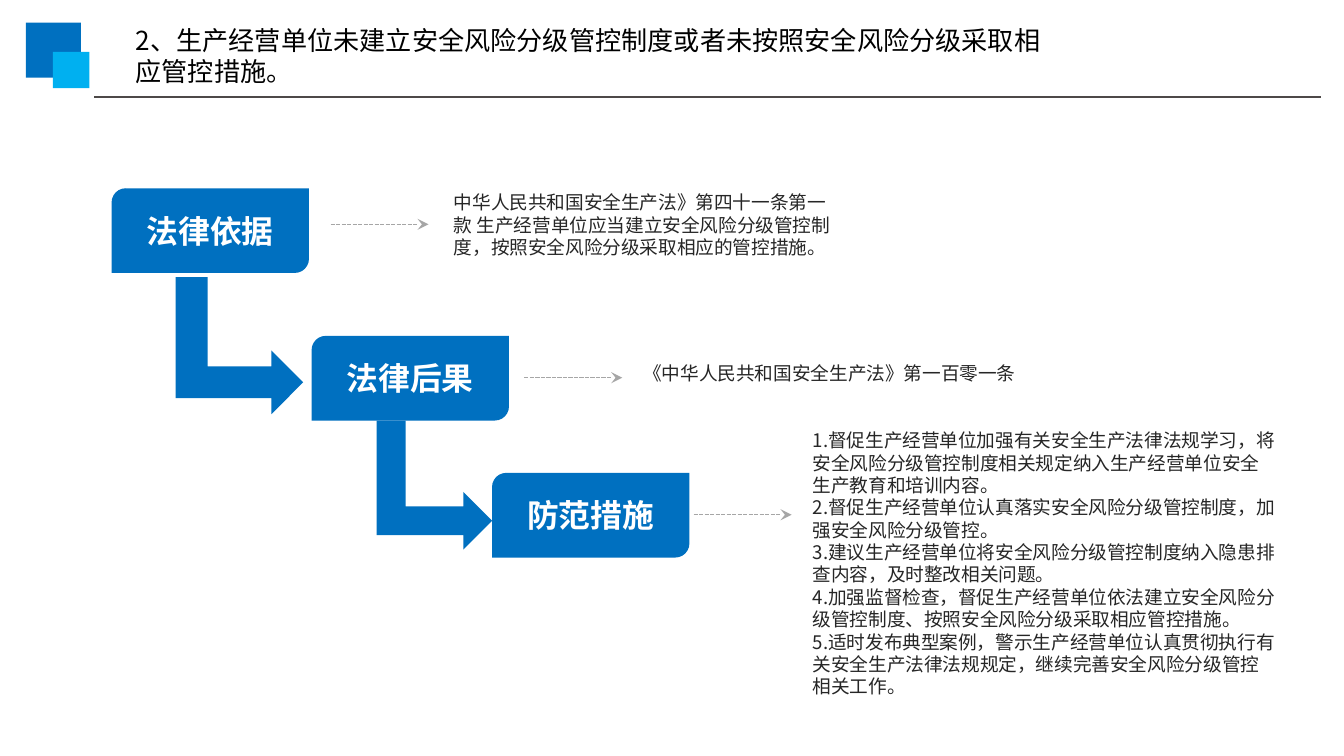
from lxml import etree
from pptx import Presentation
from pptx.dml.color import RGBColor
from pptx.enum.dml import MSO_LINE
from pptx.enum.shapes import MSO_CONNECTOR, MSO_SHAPE
from pptx.enum.text import MSO_ANCHOR, MSO_AUTO_SIZE, PP_ALIGN
from pptx.oxml.ns import qn
from pptx.util import Cm, Pt

RECT = MSO_SHAPE.RECTANGLE
BUTTON = MSO_SHAPE.ROUND_2_DIAG_RECTANGLE
BENT_ARROW = MSO_SHAPE.BENT_UP_ARROW
STRAIGHT = MSO_CONNECTOR.STRAIGHT
DASH = MSO_LINE.SQUARE_DOT
TOP, MIDDLE = MSO_ANCHOR.TOP, MSO_ANCHOR.MIDDLE
LEFT, CENTER = PP_ALIGN.LEFT, PP_ALIGN.CENTER
NO_AUTOFIT = MSO_AUTO_SIZE.NONE

BLUE = RGBColor(0x00, 0x70, 0xC0)
SKY = RGBColor(0x00, 0xB0, 0xF0)
RULE = RGBColor(0x4D, 0x49, 0x48)
GREY = RGBColor(0xA6, 0xA6, 0xA6)
INK = RGBColor(0x26, 0x26, 0x26)
BLACK = RGBColor(0x00, 0x00, 0x00)
WHITE = RGBColor(0xFF, 0xFF, 0xFF)
FONT = "Noto Sans CJK SC"


def add_block(kind, box, color):
    block = s.shapes.add_shape(kind, *[Cm(v) for v in box])
    block.shadow.inherit = False
    block.fill.solid()
    block.fill.fore_color.rgb = color
    block.line.fill.background()
    return block


def write(sp, lines, size, color, anchor=MIDDLE, align=LEFT, bold=False):
    tf = sp.text_frame
    tf.word_wrap = True
    tf.auto_size = NO_AUTOFIT
    tf.vertical_anchor = anchor
    for i, line in enumerate(lines):
        p = tf.add_paragraph() if i else tf.paragraphs[0]
        p.alignment = align
        p.line_spacing = Pt(size * 1.2)
        r = p.add_run()
        r.text = line
        r.font.name = FONT
        r.font.size = Pt(size)
        r.font.bold = bold
        r.font.color.rgb = color
        etree.SubElement(r.font._element, qn("a:ea"), typeface=FONT)


prs = Presentation()
prs.slide_width, prs.slide_height = Cm(25.4), Cm(14.29)
s = prs.slides.add_slide(prs.slide_layouts[5])

add_block(RECT, (0.49, 0.43, 1.04, 1.04), BLUE)
add_block(RECT, (1, 0.98, 0.69, 0.69), SKY)

title = s.shapes.title
title.left, title.top, title.width, title.height = Cm(2.31), Cm(0.33), Cm(18.03), Cm(1.45)
write(title, ["2、生产经营单位未建立安全风险分级管控制度或者未按照安全风险分级采取相应管控措施。"],
      14, BLACK, anchor=TOP)

steps = [
    ("法律依据", (2.11, 3.56), (6.25, 4.24), (8.33, 3.35, 7.87, 1.8), [
        "中华人民共和国安全生产法》第四十一条第一款 生产经营单位应当建立安全风险分级管控制度，按照安全风险分级采取相应的管控措施。",
    ]),
    ("法律后果", (5.89, 6.35), (9.91, 7.14), (11.91, 5.92, 7.87, 2.26), [
        "《中华人民共和国安全生产法》第一百零一条",
    ]),
    ("防范措施", (9.3, 8.94), (13.11, 9.73), (15.11, 8.15, 9.27, 5), [
        "1.督促生产经营单位加强有关安全生产法律法规学习，将安全风险分级管控制度相关规定纳入生产经营单位安全生产教育和培训内容。",
        "2.督促生产经营单位认真落实安全风险分级管控制度，加强安全风险分级管控。",
        "3.建议生产经营单位将安全风险分级管控制度纳入隐患排查内容，及时整改相关问题。",
        "4.加强监督检查，督促生产经营单位依法建立安全风险分级管控制度、按照安全风险分级采取相应管控措施。",
        "5.适时发布典型案例，警示生产经营单位认真贯彻执行有关安全生产法律法规规定，继续完善安全风险分级管控相关工作。",
    ]),
]

lines = [((1.78, 1.83), 23.19, RULE)]
for label, corner, start, text_box, details in steps:
    button = add_block(BUTTON, (*corner, 3.73, 1.6), BLUE)
    write(button, [label], 17, WHITE, align=CENTER, bold=True)
    note = s.shapes.add_textbox(*[Cm(v) for v in text_box])
    write(note, details, 10, INK)
    lines.append((start, 1.85, GREY))

for (x, y), length, color in lines:
    line = s.shapes.add_connector(STRAIGHT, Cm(x), Cm(y), Cm(x + length), Cm(y))
    line.line.color.rgb = color
    line.line.width = Pt(0.75)
    if color == GREY:
        line.line.dash_style = DASH
        etree.SubElement(line.line._get_or_add_ln(), qn("a:tailEnd"), type="stealth")
    etree.SubElement(line._element.spPr, qn("a:effectLst"))

for box in [(3.23, 5.33, 2.59, 2.41), (6.99, 8.08, 2.44, 2.18)]:
    add_block(BENT_ARROW, box, BLUE).rotation = 90

prs.save("out.pptx")
